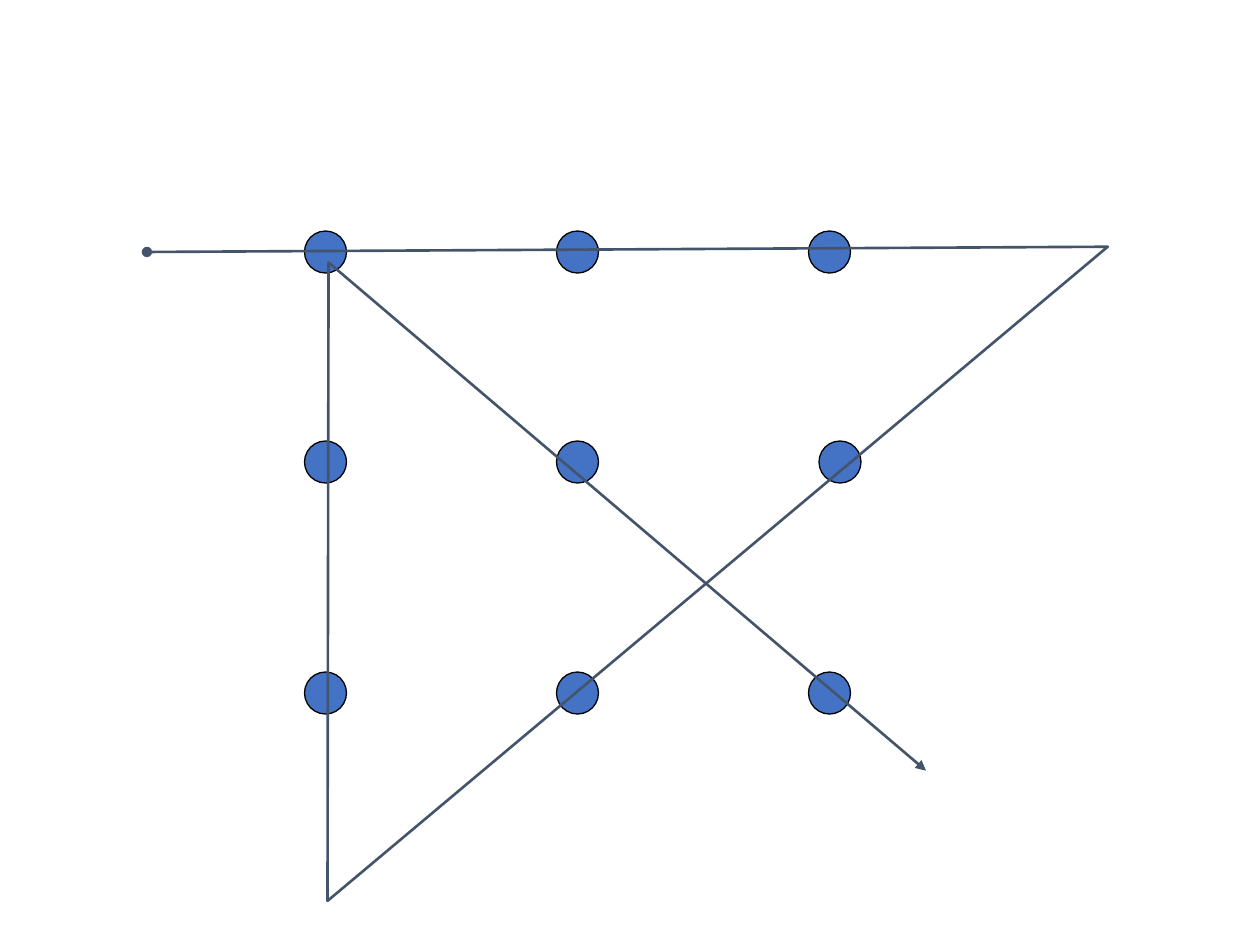
import lxml.etree
import pptx
import pptx.dml.color
import pptx.enum.shapes
import pptx.oxml.ns
import pptx.util

BLUE = pptx.dml.color.RGBColor(0x44, 0x72, 0xC4)
BLACK = pptx.dml.color.RGBColor(0x00, 0x00, 0x00)
SLATE = pptx.dml.color.RGBColor(0x44, 0x54, 0x6A)

COLUMNS, ROWS = 120, 90
DOT_SIZE = 4
DOT_ROWS = {22: (29, 53, 77), 42: (29, 53, 78), 64: (29, 53, 77)}
ROUTE = [(14, 24), (105.5, 23.5), (31.2, 85.8), (31.3, 25), (88.2, 73.4)]


def place(box, column, row):
    """Return the slide position of a grid point inside the box."""
    left, top, width, height = box
    return round(left + width * column / COLUMNS), round(top + height * row / ROWS)


def add_dots(page, box):
    """Draw the three rows of dots."""
    width, height = box[2] * DOT_SIZE // COLUMNS, box[3] * DOT_SIZE // ROWS
    for row, columns in DOT_ROWS.items():
        for column in columns:
            dot = page.shapes.add_shape(
                pptx.enum.shapes.MSO_SHAPE.OVAL, *place(box, column, row), width, height)
            dot.shadow.inherit = False
            dot.fill.solid()
            dot.fill.fore_color.rgb = BLUE
            dot.line.color.rgb = BLACK
            dot.line.width = pptx.util.Pt(0.75)


def add_route(page, box):
    """Draw the unbroken four-stroke route through the dots."""
    start, *turns = [place(box, column, row) for column, row in ROUTE]
    builder = page.shapes.build_freeform(*start)
    builder.add_line_segments(turns, close=False)
    route = builder.convert_to_shape()
    route.shadow.inherit = False
    route.fill.background()
    route.line.color.rgb = SLATE
    route.line.width = pptx.util.Pt(1.5)
    outline = route.element.spPr.get_or_add_ln()
    for tag, style in (("a:headEnd", "oval"), ("a:tailEnd", "triangle")):
        lxml.etree.SubElement(outline, pptx.oxml.ns.qn(tag), type=style)


def main():
    """Build and save the nine-dot puzzle slide."""
    deck = pptx.Presentation()
    deck.slide_width = pptx.util.Inches(10)
    deck.slide_height = pptx.util.Inches(7.5)
    page = deck.slides.add_slide(deck.slide_layouts[6])
    box = (0, 0, deck.slide_width, deck.slide_height)
    add_dots(page, box)
    add_route(page, box)
    deck.save("out.pptx")


if __name__ == "__main__":
    main()
